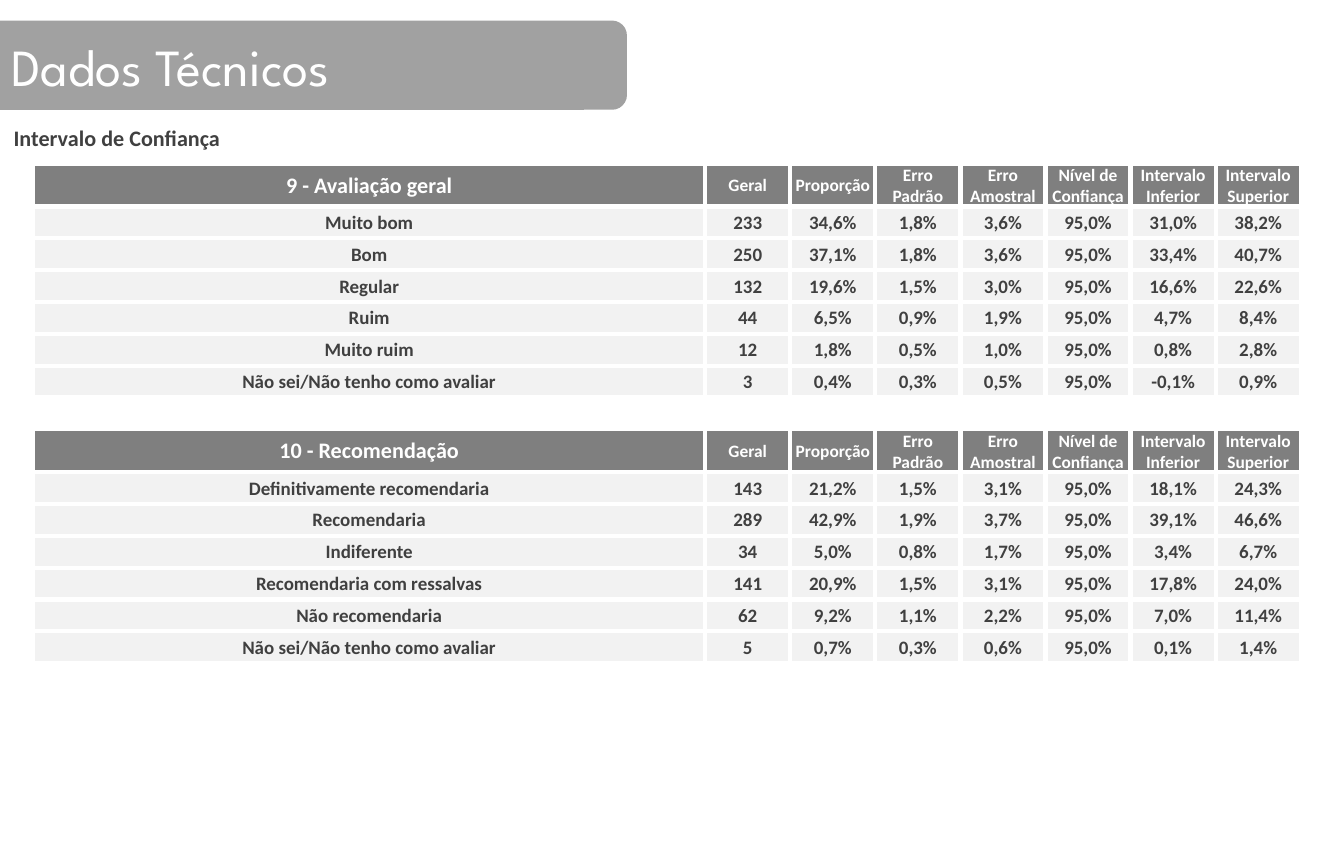
from lxml import etree
from pptx import Presentation
from pptx.dml.color import RGBColor
from pptx.enum.shapes import MSO_SHAPE
from pptx.enum.text import MSO_ANCHOR, MSO_AUTO_SIZE, PP_ALIGN
from pptx.oxml.ns import qn
from pptx.util import Pt

ROUNDED = MSO_SHAPE.ROUNDED_RECTANGLE
MIDDLE = MSO_ANCHOR.MIDDLE
FIT_SHAPE = MSO_AUTO_SIZE.SHAPE_TO_FIT_TEXT
NO_FIT = MSO_AUTO_SIZE.NONE
LEFT = PP_ALIGN.LEFT
CENTER = PP_ALIGN.CENTER

WHITE = "FFFFFF"
TEXT_GRAY = "404040"
BANNER_GRAY = "A1A1A1"
HEADER_GRAY = "7F7F7F"
ROW_GRAY = "F2F2F2"

MEASURES = ["Geral", "Proporção", "Erro Padrão", "Erro Amostral",
            "Nível de Confiança", "Intervalo Inferior", "Intervalo Superior"]

ROWS = [
    ["9 - Avaliação geral", *MEASURES],
    ["Muito bom", "233", "34,6%", "1,8%", "3,6%", "95,0%", "31,0%", "38,2%"],
    ["Bom", "250", "37,1%", "1,8%", "3,6%", "95,0%", "33,4%", "40,7%"],
    ["Regular", "132", "19,6%", "1,5%", "3,0%", "95,0%", "16,6%", "22,6%"],
    ["Ruim", "44", "6,5%", "0,9%", "1,9%", "95,0%", "4,7%", "8,4%"],
    ["Muito ruim", "12", "1,8%", "0,5%", "1,0%", "95,0%", "0,8%", "2,8%"],
    ["Não sei/Não tenho como avaliar", "3", "0,4%", "0,3%", "0,5%", "95,0%", "-0,1%", "0,9%"],
    [""] * 8,
    ["10 - Recomendação", *MEASURES],
    ["Definitivamente recomendaria", "143", "21,2%", "1,5%", "3,1%", "95,0%", "18,1%", "24,3%"],
    ["Recomendaria", "289", "42,9%", "1,9%", "3,7%", "95,0%", "39,1%", "46,6%"],
    ["Indiferente", "34", "5,0%", "0,8%", "1,7%", "95,0%", "3,4%", "6,7%"],
    ["Recomendaria com ressalvas", "141", "20,9%", "1,5%", "3,1%", "95,0%", "17,8%", "24,0%"],
    ["Não recomendaria", "62", "9,2%", "1,1%", "2,2%", "95,0%", "7,0%", "11,4%"],
    ["Não sei/Não tenho como avaliar", "5", "0,7%", "0,3%", "0,6%", "95,0%", "0,1%", "1,4%"],
]
LABEL_WIDTH, MEASURE_WIDTH = 425.2, 53.85
HEADER_HEIGHT, ROW_HEIGHT = 26.1, 20.18


def rgb(color):
    return RGBColor.from_string(color)


def style_text(paragraph, font_name, size, color, bold, align):
    paragraph.alignment = align
    for run in paragraph.runs:
        run.font.name = font_name
        run.font.size = Pt(size)
        run.font.bold = bold
        run.font.color.rgb = rgb(color)


prs = Presentation()
prs.slide_width = Pt(850.4)
prs.slide_height = Pt(540)
slide = prs.slides.add_slide(prs.slide_layouts[5])

banner = slide.shapes.add_shape(ROUNDED, Pt(-17.3), Pt(13), Pt(414), Pt(56.5))
banner.shadow.inherit = False
banner.fill.solid()
banner.fill.fore_color.rgb = rgb(BANNER_GRAY)
banner.line.fill.background()

title = slide.shapes.title
slide.shapes._spTree.append(title._element)
title.left, title.top, title.width, title.height = Pt(0), Pt(13), Pt(386), Pt(56.5)
title.text_frame.text = "Dados Técnicos"
title.text_frame.auto_size = NO_FIT
title.text_frame.vertical_anchor = MIDDLE
style_text(title.text_frame.paragraphs[0], "League Spartan", 33, WHITE, False, LEFT)

subtitle = slide.shapes.add_textbox(Pt(1.5), Pt(75), Pt(146), Pt(24.3))
subtitle.text_frame.text = "Intervalo de Confiança"
subtitle.text_frame.word_wrap = False
subtitle.text_frame.auto_size = FIT_SHAPE
style_text(subtitle.text_frame.paragraphs[0], "Calibri", 14, TEXT_GRAY, True, LEFT)

heights = [HEADER_HEIGHT if row[1] == "Geral" else ROW_HEIGHT for row in ROWS]
widths = [LABEL_WIDTH] + [MEASURE_WIDTH] * len(MEASURES)
intervals = slide.shapes.add_table(len(ROWS), len(widths), Pt(21), Pt(103.6),
                                   Pt(sum(widths)), Pt(sum(heights))).table
intervals.first_row = False
intervals.horz_banding = False
for column, width in zip(intervals.columns, widths):
    column.width = Pt(width)

for row_index, (row, height) in enumerate(zip(ROWS, heights)):
    intervals.rows[row_index].height = Pt(height)
    is_header = height == HEADER_HEIGHT
    for column_index, value in enumerate(row):
        cell = intervals.cell(row_index, column_index)
        cell.margin_left = cell.margin_top = cell.margin_right = Pt(0.7)
        cell.margin_bottom = Pt(0)
        cell.vertical_anchor = MIDDLE
        for side in ("a:lnL", "a:lnR", "a:lnT", "a:lnB"):
            border = etree.SubElement(cell._tc.get_or_add_tcPr(), qn(side), w=str(Pt(3)))
            border_fill = etree.SubElement(border, qn("a:solidFill"))
            etree.SubElement(border_fill, qn("a:srgbClr"), val=WHITE)
        paragraph = cell.text_frame.paragraphs[0]
        if not value:
            cell.fill.background()
            etree.SubElement(paragraph._p, qn("a:endParaRPr"), sz="1200")
            continue
        cell.fill.solid()
        cell.fill.fore_color.rgb = rgb(HEADER_GRAY if is_header else ROW_GRAY)
        paragraph.text = value
        header_size = 14 if column_index == 0 else 11
        style_text(paragraph, "Calibri", header_size if is_header else 12,
                   WHITE if is_header else TEXT_GRAY, True, CENTER)

prs.save("out.pptx")
